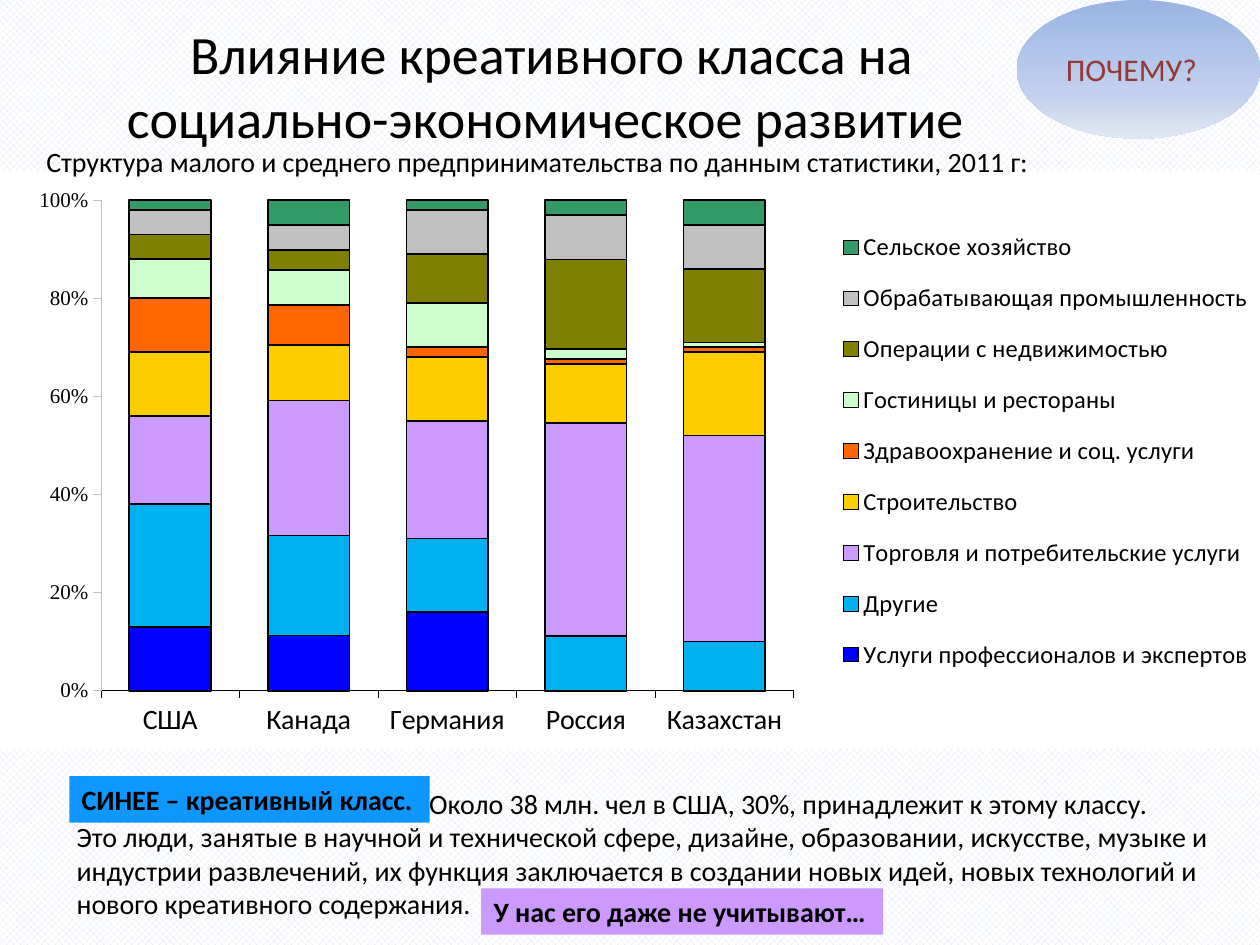
from copy import deepcopy
from typing import NamedTuple

from lxml.etree import SubElement
from pptx import Presentation
from pptx.chart.data import CategoryChartData
from pptx.dml.color import RGBColor
from pptx.enum.chart import XL_CHART_TYPE, XL_LEGEND_POSITION, XL_TICK_MARK
from pptx.enum.dml import MSO_PATTERN
from pptx.enum.shapes import MSO_SHAPE
from pptx.enum.text import MSO_ANCHOR, PP_ALIGN
from pptx.oxml.ns import qn
from pptx.util import Pt

class Theme(NamedTuple):
    font: str = "Calibri"
    chart_font: str = "Roboto"
    value_font: str = "Times New Roman"
    title_size: float = 30.8
    question_size: float = 18
    body_size: float = 16
    legend_size: float = 14
    chart_size: float = 12
    black: str = "000000"
    white: str = "FFFFFF"
    pattern: str = "DCE6F2"
    question: str = "953735"
    axis: str = "C0C0C0"
    creative: str = "0D97FF"
    remark: str = "CC99FF"
    gradient: tuple = ((0, "9AB5E4"), (0.69, "C2D1ED"), (1, "E1E8F5"))

class Box(NamedTuple):
    left: float
    top: float
    width: float
    height: float

class Sector(NamedTuple):
    name: str
    color: str
    shares: tuple

class Label(NamedTuple):
    text: str
    box: Box
    color: str

THEME = Theme()
COUNTRIES = ("США", "Канада", "Германия", "Россия", "Казахстан")
SECTORS = (
    Sector("Услуги профессионалов и экспертов", "0000FF", (13, 11, 16, 0, 0)),
    Sector("Другие", "00B0F0", (25, 20, 15, 11, 10)),
    Sector("Торговля и потребительские услуги", "CC99FF", (18, 27, 24, 43, 42)),
    Sector("Строительство", "FFCC00", (13, 11, 13, 12, 17)),
    Sector("Здравоохранение и соц. услуги", "FF6600", (11, 8, 2, 1, 1)),
    Sector("Гостиницы и рестораны", "CCFFCC", (8, 7, 9, 2, 1)),
    Sector("Операции с недвижимостью", "808000", (5, 4, 10, 18, 15)),
    Sector("Обрабатывающая промышленность", "C0C0C0", (5, 5, 9, 9, 9)),
    Sector("Сельское хозяйство", "339966", (2, 5, 2, 3, 5)),
)
LABELS = (
    Label("У нас его даже не учитывают…", Box(275, 507.6, 229.7, 26.6), THEME.remark),
    Label("СИНЕЕ – креативный класс.", Box(39.6, 443.5, 205.9, 26.6), THEME.creative),
)

def rgb(color: str) -> RGBColor:
    return RGBColor.from_string(color)

def style_font(font, size: float, name: str = THEME.font,
               color: str = THEME.black, bold: bool = False) -> None:
    font.name, font.size, font.bold = name, Pt(size), bold
    font.color.rgb = rgb(color)

def style_line(line, color: str, width: float) -> None:
    line.color.rgb = rgb(color)
    line.width = Pt(width)

def add_run(paragraph, text: str, size: float, **style) -> None:
    run = paragraph.add_run()
    run.text = text
    style_font(run.font, size, **style)

def add_text_box(slide, box: Box):
    """Add a wrapping text box and return its text frame."""
    frame = slide.shapes.add_textbox(*map(Pt, box)).text_frame
    frame.word_wrap = True
    return frame

def add_plain_shape(slide, kind: MSO_SHAPE, box: Box):
    shape = slide.shapes.add_shape(kind, *map(Pt, box))
    shape.shadow.inherit = False
    shape.line.fill.background()
    return shape

def add_question(slide) -> None:
    shape = add_plain_shape(slide, MSO_SHAPE.OVAL, Box(581, 0, 139, 79.2))
    shape.fill.gradient()
    shape.fill.gradient_angle = 270
    stops = shape._element.spPr.find(".//" + qn("a:gsLst"))
    stops.append(deepcopy(stops[0]))
    for stop, (position, color) in zip(shape.fill.gradient_stops, THEME.gradient):
        stop.position = position
        stop.color.rgb = rgb(color)
    frame = shape.text_frame
    frame.vertical_anchor = MSO_ANCHOR.MIDDLE
    frame.margin_right = Pt(15)
    frame.paragraphs[0].alignment = PP_ALIGN.CENTER
    add_run(frame.paragraphs[0], "ПОЧЕМУ?", THEME.question_size, color=THEME.question)

def add_label(slide, label: Label) -> None:
    shape = add_plain_shape(slide, MSO_SHAPE.RECTANGLE, label.box)
    shape.fill.solid()
    shape.fill.fore_color.rgb = rgb(label.color)
    frame = shape.text_frame
    frame.word_wrap = False
    frame.vertical_anchor = MSO_ANCHOR.TOP
    frame.paragraphs[0].alignment = PP_ALIGN.LEFT
    add_run(frame.paragraphs[0], label.text, THEME.body_size, bold=True)

def make_layout(parent, index: int, box: Box, *extra: tuple) -> None:
    """Place a chart part by fractions of the chart area."""
    for old in parent.findall(qn("c:layout")):
        parent.remove(old)
    layout = SubElement(parent, qn("c:layout"))
    parent.insert(index, layout)
    manual = SubElement(layout, qn("c:manualLayout"))
    for tag, value in (*extra, ("xMode", "edge"), ("yMode", "edge"), *zip("xywh", box)):
        SubElement(manual, qn(f"c:{tag}")).set("val", str(value))

def make_white_fill(parent):
    properties = SubElement(parent, qn("c:spPr"))
    fill = SubElement(properties, qn("a:solidFill"))
    SubElement(fill, qn("a:srgbClr")).set("val", THEME.white)
    SubElement(SubElement(properties, qn("a:ln")), qn("a:noFill"))
    return properties

def style_axis(axis, size: float, font: str, line_color: str) -> None:
    style_font(axis.tick_labels.font, size, font)
    axis.major_tick_mark = XL_TICK_MARK.OUTSIDE
    axis.minor_tick_mark = XL_TICK_MARK.NONE
    style_line(axis.format.line, line_color, 0.25)

def add_sector_chart(slide, box: Box) -> None:
    data = CategoryChartData()
    data.categories = COUNTRIES
    for sector in SECTORS:
        data.add_series(sector.name, sector.shares)
    chart = slide.shapes.add_chart(
        XL_CHART_TYPE.COLUMN_STACKED_100, *map(Pt, box), data).chart
    chart.has_title = False
    style_font(chart.font, THEME.chart_size, THEME.chart_font)
    plot = chart.plots[0]
    plot.gap_width, plot.overlap, plot.vary_by_categories = 70, 100, False
    for series, sector in zip(plot.series, SECTORS):
        series.format.fill.solid()
        series.format.fill.fore_color.rgb = rgb(sector.color)
        style_line(series.format.line, THEME.black, 1)
    style_axis(chart.category_axis, THEME.body_size, THEME.font, THEME.black)
    values = chart.value_axis
    style_axis(values, THEME.chart_size, THEME.value_font, THEME.axis)
    values.minimum_scale, values.maximum_scale, values.major_unit = 0, 1, 0.2
    values.tick_labels.number_format = "0%"
    values.tick_labels.number_format_is_linked = False
    style_line(values.major_gridlines.format.line, THEME.white, 0.25)
    chart.has_legend = True
    chart.legend.position = XL_LEGEND_POSITION.RIGHT
    chart.legend.include_in_layout = False
    style_font(chart.legend.font, THEME.legend_size)
    make_layout(chart.legend._element, 1, Box(0.66, 0.07, 0.34, 0.83))
    space = chart._chartSpace
    plot_area = space.find(".//" + qn("c:plotArea"))
    make_layout(plot_area, 0, Box(0.08, 0.05, 0.55, 0.85), ("layoutTarget", "inner"))
    make_white_fill(plot_area)
    space.find(qn("c:txPr")).addprevious(make_white_fill(space))

def main() -> None:
    presentation = Presentation()
    presentation.slide_width, presentation.slide_height = Pt(720), Pt(540)
    slide = presentation.slides.add_slide(presentation.slide_layouts[6])
    background = slide.background.fill
    background.patterned()
    background.pattern = MSO_PATTERN.OUTLINED_DIAMOND
    background.fore_color.rgb = rgb(THEME.pattern)
    background.back_color.rgb = rgb(THEME.white)

    title = add_text_box(slide, Box(48.2, 3.6, 534.2, 90))
    title.vertical_anchor = MSO_ANCHOR.MIDDLE
    title.paragraphs[0].alignment = PP_ALIGN.CENTER
    add_run(title.paragraphs[0], "Влияние креативного класса на "
            "социально-экономическое развитие ", THEME.title_size)
    explanation = add_text_box(slide, Box(36.7, 445.7, 663.1, 85)).paragraphs[0]
    explanation._p.get_or_add_pPr().set("indent", str(Pt(201.5)))
    add_run(explanation, "Около 38 млн. чел в США, 30%, принадлежит к этому классу.",
            THEME.body_size)
    explanation.add_line_break()
    add_run(explanation, "Это люди, занятые в научной и технической сфере, дизайне, "
            "образовании, искусстве, музыке и индустрии развлечений, их функция заключается в "
            "создании новых идей, новых технологий и нового креативного содержания.",
            THEME.body_size)
    add_question(slide)
    add_sector_chart(slide, Box(0, 97.9, 720, 329.8))
    subtitle = add_text_box(slide, Box(19.4, 79.2, 714.2, 26.6)).paragraphs[0]
    add_run(subtitle, "Структура малого и среднего предпринимательства "
            "по данным статистики, 2011 г:", THEME.body_size)
    for label in LABELS:
        add_label(slide, label)
    presentation.save("out.pptx")

if __name__ == "__main__":
    main()
